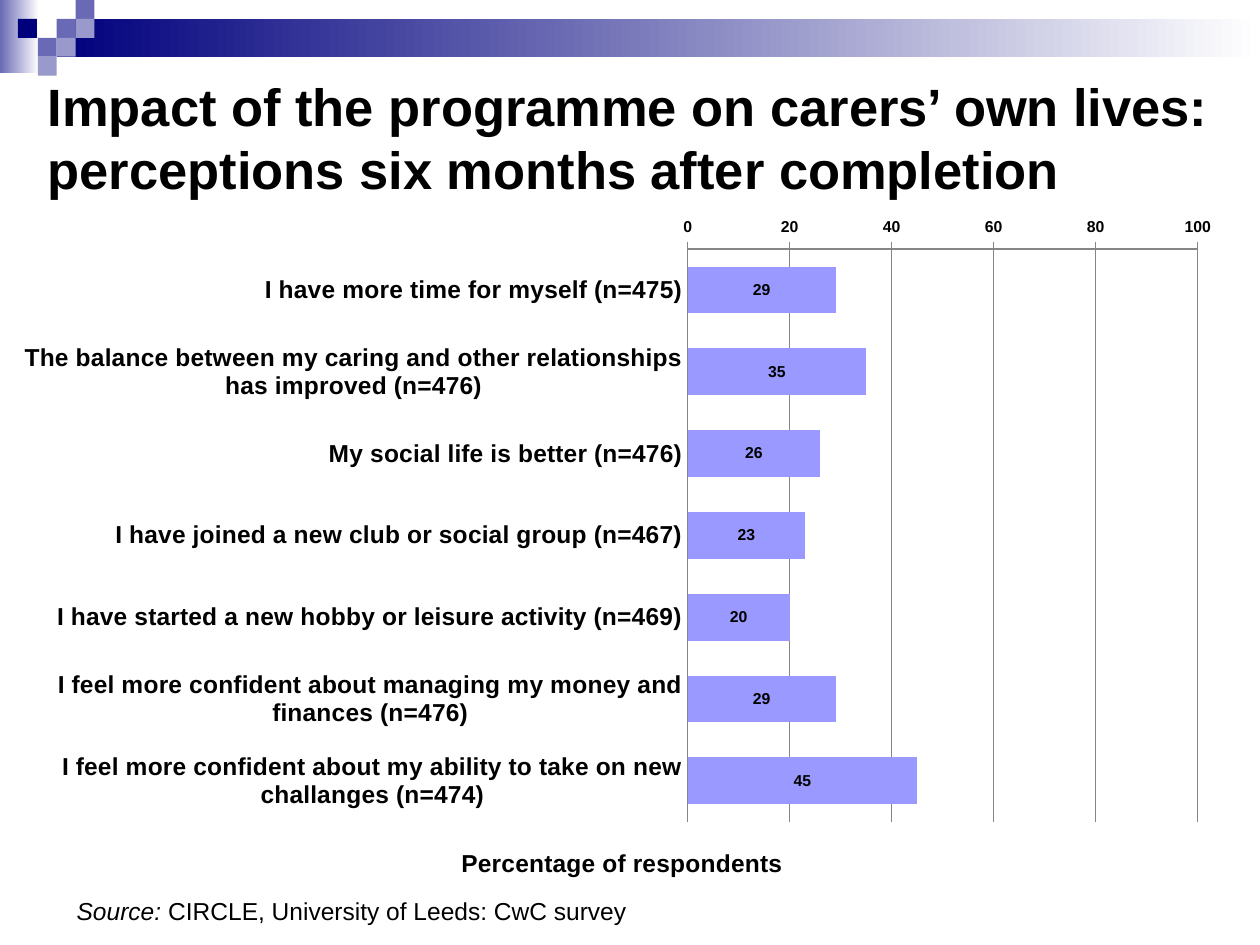
import pptx
import pptx.util
import pptx.dml.color
import pptx.chart.data
import pptx.enum.chart
import pptx.enum.shapes
import pptx.enum.text
import pptx.oxml
import pptx.oxml.ns

Pt = pptx.util.Pt
FONT = "Arial"
BLACK = "000000"
NAVY, VIOLET, LILAC, WHITE = "00007D", "6969B5", "9999CC", "FFFFFF"
BAR, GREY = "9999FF", "868686"

RESPONSES = [
    ("I have more time for myself (n=475)", 29),
    ("The balance between my caring and other relationships has improved (n=476)", 35),
    ("My social life is better (n=476)", 26),
    ("I have joined a new club or social group (n=467)", 23),
    ("I have started a new hobby or leisure activity (n=469)", 20),
    ("I feel more confident about managing my money and finances (n=476)", 29),
    ("I feel more confident about my ability to take on new challanges (n=474)", 45),
]


def color(value):
    return pptx.dml.color.RGBColor.from_string(value)


def style_font(font, size, bold=False):
    font.name = FONT
    font.size = Pt(size)
    font.bold = bold
    font.color.rgb = color(BLACK)


def add_block(page, box, *colors):
    """Add a borderless rectangle; two colours make a left-to-right gradient."""
    block = page.shapes.add_shape(
        pptx.enum.shapes.MSO_SHAPE.RECTANGLE, *map(Pt, box))
    block.shadow.inherit = False
    block.line.fill.background()
    if len(colors) == 1:
        block.fill.solid()
        block.fill.fore_color.rgb = color(colors[0])
    else:
        block.fill.gradient()
        block.fill.gradient_angle = 0
        for stop, value, position in zip(block.fill.gradient_stops, colors, (0, 1)):
            stop.color.rgb = color(value)
            stop.position = position


def add_banner(page, box):
    left, top, width, height = box
    side = height / 4
    add_block(page, (left, top, 22.3, 41.8), VIOLET, WHITE)
    add_block(page, (left + 3 * side, top + side, width - 3 * side, 2 * side), NAVY, WHITE)
    squares = [(3, 1, VIOLET), (4, 0, VIOLET), (4, 1, LILAC), (2, 2, VIOLET),
               (0.95, 1, NAVY), (3, 2, LILAC), (2, 3, LILAC)]
    for column, row, value in squares:
        add_block(page, (left + column * side, top + row * side, side, side), value)


def add_text(page, box, spans, size, bold=False):
    """Add one paragraph from (text, italic) spans."""
    frame = page.shapes.add_textbox(*map(Pt, box)).text_frame
    frame.word_wrap = True
    frame.vertical_anchor = pptx.enum.text.MSO_ANCHOR.MIDDLE
    para = frame.paragraphs[0]
    style_font(para.font, size, bold)
    for text, italic in spans:
        span = para.add_run()
        span.text = text
        span.font.italic = italic


def set_layout(parent, index, inner=False, **fractions):
    """Fix the place of a chart part as fractions of the chart."""
    for old in parent.findall(pptx.oxml.ns.qn("c:layout")):
        parent.remove(old)
    target = '<c:layoutTarget val="inner"/>' if inner else ""
    modes = '<c:xMode val="edge"/><c:yMode val="edge"/>'
    values = "".join(f'<c:{key} val="{value}"/>' for key, value in fractions.items())
    parent.insert(index, pptx.oxml.parse_xml(
        f'<c:layout {pptx.oxml.ns.nsdecls("c")}><c:manualLayout>'
        f"{target}{modes}{values}</c:manualLayout></c:layout>"))


def style_line(line):
    line.color.rgb = color(GREY)
    line.width = Pt(0.75)


def style_axes(chart):
    tick = pptx.enum.chart.XL_TICK_MARK
    categories, values = chart.category_axis, chart.value_axis
    categories.reverse_order = True
    categories.major_tick_mark = tick.NONE
    style_font(categories.tick_labels.font, 14, True)

    values.minimum_scale, values.maximum_scale, values.major_unit = 0, 100, 20
    values.major_tick_mark = tick.OUTSIDE
    values.has_major_gridlines = True
    values.tick_labels.number_format = "0"
    values.tick_labels.number_format_is_linked = False
    style_font(values.tick_labels.font, 9, True)
    for line in (categories.format.line, values.format.line,
                 values.major_gridlines.format.line):
        style_line(line)

    title = values.axis_title
    title.text_frame.text = "Percentage of respondents"
    style_font(title.text_frame.paragraphs[0].font, 14, True)
    title.text_frame._txBody.bodyPr.set("rot", "0")
    set_layout(title._element, 1, x=0.37, y=0.92)


def add_response_chart(page, box):
    data = pptx.chart.data.CategoryChartData(number_format="0")
    data.categories = [label for label, _ in RESPONSES]
    data.add_series("Series 1", [value for _, value in RESPONSES])
    chart = page.shapes.add_chart(
        pptx.enum.chart.XL_CHART_TYPE.BAR_STACKED, *map(Pt, box), data).chart
    chart.has_title = False
    chart.has_legend = False
    style_font(chart.font, 9, True)
    style_axes(chart)
    set_layout(chart._chartSpace.chart.plotArea, 0, inner=True,
               x=0.557, y=0.065, w=0.413, h=0.825)

    plot = chart.plots[0]
    plot.gap_width, plot.overlap = 75, 100
    plot.vary_by_categories = False
    fill = plot.series[0].format.fill
    fill.solid()
    fill.fore_color.rgb = color(BAR)
    plot.has_data_labels = True
    labels = plot.data_labels
    labels.show_value = True
    labels.number_format = "0"
    labels.number_format_is_linked = False
    labels.position = pptx.enum.chart.XL_LABEL_POSITION.CENTER
    style_font(labels.font, 9, True)


def main():
    deck = pptx.Presentation()
    deck.slide_width, deck.slide_height = Pt(720), Pt(540)
    page = deck.slides.add_slide(deck.slide_layouts[6])
    add_banner(page, (0, 0, 720, 43.2))
    add_text(page, (20.2, 49, 680.4, 59),
             [("Impact of the programme on carers’ own lives: "
               "perceptions six months after completion", False)], 30, True)
    add_response_chart(page, (0, 116.6, 705.6, 396.7))
    add_text(page, (36.7, 508.3, 421.2, 24.5),
             [("Source: ", True), ("CIRCLE, University of Leeds: CwC survey", False)], 14)
    deck.save("out.pptx")


if __name__ == "__main__":
    main()
